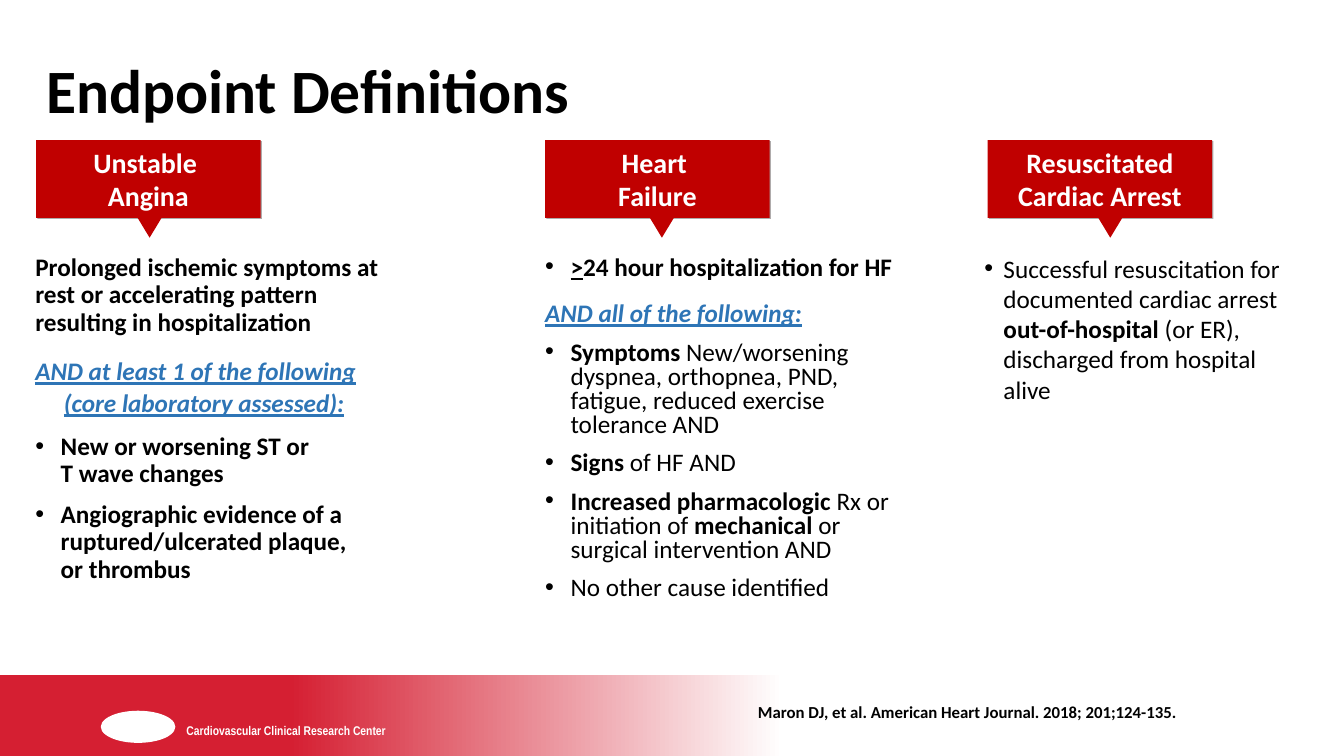
from lxml.etree import SubElement
from pptx import Presentation
from pptx.dml.color import RGBColor
from pptx.enum.shapes import MSO_SHAPE
from pptx.enum.text import MSO_ANCHOR, PP_ALIGN
from pptx.oxml.ns import qn
from pptx.util import Cm, Pt

COLORS = {"black": "000000", "white": "FFFFFF", "blue": "2E75B6",
          "header": "C00000", "edge": "AFABAB", "band": "D51F32"}

TITLE = "Endpoint Definitions"
CENTER = "Cardiovascular Clinical Research Center"
CITATION = "Maron DJ, et al. American Heart Journal. 2018; 201;124-135."

BULLET = {"bullet": True}
LEAD = {"color": "blue", "before": 16}

COLUMNS = [
    {"heading": ["Unstable ", "Angina"], "left": 0.91, "pointer": 3.45,
     "body": (0.64, 6.3, 9.42, 10.52), "spacing": 0.9, "indent": 0.64,
     "items": [
         ([("Prolonged ischemic symptoms at rest or accelerating pattern "
            "resulting in hospitalization", "b")], {}),
         ([("AND at least 1 of the following\t\n\t(core laboratory assessed):", "biu"),
           (" ", "", 22)], {**LEAD, "tabs": (0.72, 8.8)}),
         ([("New or worsening ST or\nT wave changes", "b")], BULLET),
         ([("Angiographic evidence of a ruptured/ulcerated plaque, \nor thrombus", "b")], BULLET),
     ]},
    {"heading": ["Heart ", "Failure"], "left": 13.74, "pointer": 16.36,
     "body": (13.49, 6.35, 9.42, 10.16), "spacing": 0.8, "indent": 0.64,
     "items": [
         ([(">", "bu"), ("24 hour hospitalization for HF", "b")], BULLET),
         ([("AND all of the following:", "biu")], LEAD),
         ([("Symptoms ", "b"),
           ("New/worsening dyspnea, orthopnea, PND, fatigue, "
            "reduced exercise tolerance AND", "")], BULLET),
         ([("Signs", "b"), (" of HF AND", "")], BULLET),
         ([("Increased pharmacologic ", "b"), ("Rx or initiation of ", ""),
           ("mechanical", "b"), (" or surgical intervention AND", "")], BULLET),
         ([("No other cause identified", "")], BULLET),
     ]},
    {"heading": ["Resuscitated Cardiac Arrest"], "left": 24.89, "pointer": 27.66,
     "body": (24.56, 6.25, 8.03, 4.11), "spacing": 1.0, "indent": 0.48,
     "items": [
         ([("Successful resuscitation for documented cardiac arrest ", ""),
           ("out-of-hospital ", "b"),
           ("(or ER), discharged from hospital alive", "")], BULLET),
     ]},
]

HEADER_TOP, HEADER_WIDTH, HEADER_HEIGHT = 3.53, 5.66, 1.96
POINTER_WIDTH, POINTER_HEIGHT = 0.64, 0.53
EDGE_SHIFT = 0.03


def rgb(name):
    return RGBColor.from_string(COLORS[name])


def write(frame, spans, size=18, color="black", font="Calibri", align=None,
          spacing=None, before=0, bullet=False, indent=0.64, tabs=()):
    first = len(frame.paragraphs) == 1 and not frame.paragraphs[0].runs
    para = frame.paragraphs[0] if first else frame.add_paragraph()
    properties = para._p.get_or_add_pPr()
    if bullet:
        properties.set("marL", str(Cm(indent)))
        properties.set("indent", str(-Cm(indent)))
        SubElement(properties, qn("a:buFont"), typeface="Arial")
        SubElement(properties, qn("a:buChar"), char="•")
    if tabs:
        stops = SubElement(properties, qn("a:tabLst"))
        for stop in tabs:
            SubElement(stops, qn("a:tab"), pos=str(Cm(stop)), algn="l")
    para.alignment = align
    para.line_spacing = spacing
    para.space_before = Pt(0 if first else before)
    for text, style, *own_size in spans:
        for number, line in enumerate(text.split("\n")):
            if number:
                para.add_line_break()
            span = para.add_run()
            span.text = line
            span.font.name = font
            span.font.size = Pt(own_size[0] if own_size else size)
            span.font.bold = "b" in style
            span.font.italic = "i" in style
            span.font.underline = "u" in style
            span.font.color.rgb = rgb(color)


def add_block(page, kind, place, color):
    block = page.shapes.add_shape(kind, *map(Cm, place))
    block.shadow.inherit = False
    block.line.fill.background()
    block.fill.solid()
    block.fill.fore_color.rgb = rgb(color)
    return block


def add_text(page, place):
    frame = page.shapes.add_textbox(*map(Cm, place)).text_frame
    frame.word_wrap = True
    return frame


def add_footer(page):
    band = add_block(page, MSO_SHAPE.RECTANGLE, (0, 17, 19.75, 2.05), "band")
    band.fill.gradient()
    band.fill.gradient_angle = 180
    for stop, (position, name) in zip(band.fill.gradient_stops, [(0, "white"), (0.63, "band")]):
        stop.position = position
        stop.color.rgb = rgb(name)
    add_block(page, MSO_SHAPE.OVAL, (2.54, 17.91, 1.88, 0.81), "white")
    write(add_text(page, (4.45, 18.08, 6.07, 0.38)), [(CENTER, "b")],
          size=9, color="white", font="Arial Narrow")
    write(add_text(page, (18.85, 17.55, 11.6, 0.76)), [(CITATION, "b")], size=12)


def add_column(page, column):
    left = column["left"]
    add_block(page, MSO_SHAPE.RECTANGLE,
              (left + EDGE_SHIFT, HEADER_TOP + EDGE_SHIFT, HEADER_WIDTH, HEADER_HEIGHT), "edge")
    header = add_block(page, MSO_SHAPE.RECTANGLE,
                       (left, HEADER_TOP, HEADER_WIDTH, HEADER_HEIGHT), "header")
    header.text_frame.word_wrap = True
    header.text_frame.vertical_anchor = MSO_ANCHOR.TOP
    for line in column["heading"]:
        write(header.text_frame, [(line, "b")], size=20, color="white", align=PP_ALIGN.CENTER)
    pointer = add_block(page, MSO_SHAPE.ISOSCELES_TRIANGLE,
                        (column["pointer"], HEADER_TOP + HEADER_HEIGHT - EDGE_SHIFT,
                         POINTER_WIDTH, POINTER_HEIGHT), "header")
    pointer.rotation = 180
    frame = add_text(page, column["body"])
    for spans, options in column["items"]:
        write(frame, spans, **{"spacing": column["spacing"], "before": 10,
                               "indent": column["indent"], **options})


def main():
    deck = Presentation()
    deck.slide_width, deck.slide_height = Cm(33.87), Cm(19.05)
    page = deck.slides.add_slide(deck.slide_layouts[5])
    title = page.shapes.title
    title.left, title.top, title.width, title.height = map(Cm, (0.91, 1.02, 31.52, 2.67))
    title.text_frame.vertical_anchor = MSO_ANCHOR.MIDDLE
    write(title.text_frame, [(TITLE, "b")], size=44, align=PP_ALIGN.LEFT, spacing=0.9)
    add_footer(page)
    for column in COLUMNS:
        add_column(page, column)
    deck.save("out.pptx")


if __name__ == "__main__":
    main()
